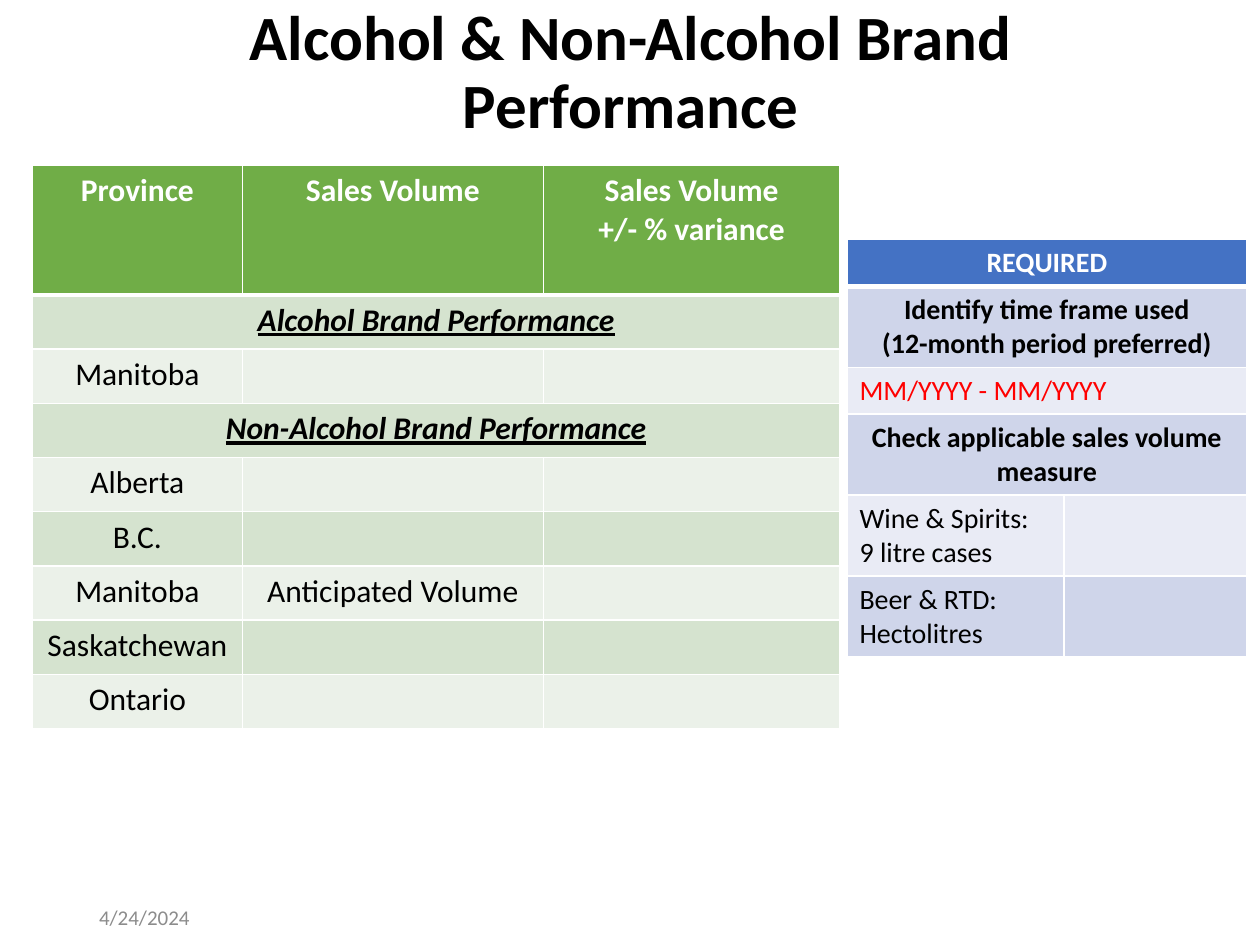
from lxml import etree
from pptx import Presentation
from pptx.dml.color import RGBColor
from pptx.enum.text import MSO_ANCHOR, MSO_AUTO_SIZE, PP_ALIGN
from pptx.oxml.ns import qn
from pptx.util import Pt

LEFT, CENTER = PP_ALIGN.LEFT, PP_ALIGN.CENTER
MIDDLE = MSO_ANCHOR.MIDDLE
NO_AUTOFIT = MSO_AUTO_SIZE.NONE
TITLE_ONLY = 5
FONT = "Calibri"

COLORS = {
    "black": "000000", "white": "FFFFFF", "gray": "8C8C8C", "red": "FF0000",
    "green": "70AD47", "green_dark": "D5E3CF", "green_light": "EBF1E9",
    "blue": "4472C4", "blue_dark": "CFD5EA", "blue_light": "E9EBF5",
}
SECTION = {"bold": True, "italic": True, "underline": True}


def rgb(name):
    return RGBColor.from_string(COLORS[name])


def write_text(frame, text, size=18, color="black", align=LEFT, bold=False,
               italic=False, underline=False, spacing=None):
    """Fill a text frame, one paragraph for each line of text."""
    frame.word_wrap = True
    for index, line in enumerate(text.split("\n")):
        paragraph = frame.add_paragraph() if index else frame.paragraphs[0]
        paragraph.alignment = align
        paragraph.line_spacing = spacing
        run = paragraph.add_run()
        run.text = line
        font = run.font
        font.name, font.size, font.color.rgb = FONT, Pt(size), rgb(color)
        font.bold, font.italic, font.underline = bold, italic, underline


def set_borders(cell, top, bottom):
    """Draw white cell borders; the schema wants them before the fill."""
    properties = cell._tc.get_or_add_tcPr()
    widths = {"a:lnL": 1, "a:lnR": 1, "a:lnT": top, "a:lnB": bottom}
    for index, (tag, width) in enumerate(widths.items()):
        line = etree.Element(qn(tag), w=str(Pt(width)))
        fill = etree.SubElement(line, qn("a:solidFill"))
        etree.SubElement(fill, qn("a:srgbClr"), val=COLORS["white"])
        properties.insert(index, line)


def add_banded_table(slide, box, columns, heights, hue):
    """Add an empty table with a header row and two alternating shades."""
    frame = slide.shapes.add_table(len(heights), len(columns), *map(Pt, box))
    table = frame.table
    for column, width in zip(table.columns, columns):
        column.width = Pt(width)
    for index, (row, height) in enumerate(zip(table.rows, heights)):
        row.height = Pt(height)
        shade = hue if index == 0 else hue + ("_dark" if index % 2 else "_light")
        for cell in row.cells:
            cell.fill.solid()
            cell.fill.fore_color.rgb = rgb(shade)
            set_borders(cell, top=3 if index == 1 else 1, bottom=1 if index else 3)
    return table


def merge_row(table, row):
    table.cell(row, 0).merge(table.cell(row, len(table.columns) - 1))


def add_title(slide, box, text):
    title = slide.shapes.title
    title.left, title.top, title.width, title.height = map(Pt, box)
    frame = title.text_frame
    frame.auto_size = NO_AUTOFIT
    frame.vertical_anchor = MIDDLE
    write_text(frame, text, size=36, align=CENTER, bold=True, spacing=0.9)


def add_performance_table(slide, box):
    header = ["Province", "Sales Volume", "Sales Volume\n+/- % variance"]
    rows = [
        ["Alcohol Brand Performance"],
        ["Manitoba", "", ""],
        ["Non-Alcohol Brand Performance"],
        ["Alberta", "", ""],
        ["B.C.", "", ""],
        ["Manitoba", "Anticipated Volume", ""],
        ["Saskatchewan", "", ""],
        ["Ontario", "", ""],
    ]
    table = add_banded_table(slide, box, [120, 172, 169.5],
                             [74] + [31] * len(rows), "green")
    for column, text in enumerate(header):
        write_text(table.cell(0, column).text_frame, text, color="white",
                   align=CENTER, bold=True)
    for index, texts in enumerate(rows, start=1):
        is_section = len(texts) == 1
        if is_section:
            merge_row(table, index)
        for column, text in enumerate(texts):
            if text:
                write_text(table.cell(index, column).text_frame, text,
                           align=CENTER, **(SECTION if is_section else {}))


def add_required_table(slide, box):
    heading = {"align": CENTER, "bold": True}
    rows = [
        ("REQUIRED", {**heading, "color": "white"}),
        ("Identify time frame used\n(12-month period preferred)", heading),
        ("MM/YYYY - MM/YYYY", {"color": "red"}),
        ("Check applicable sales volume measure", heading),
        ("Wine & Spirits:\n9 litre cases", {}),
        ("Beer & RTD: Hectolitres", {}),
    ]
    single, double, merged_rows = 26.7, 46.3, 4
    table = add_banded_table(slide, box, [124, 104.5],
                             [single, double] * 2 + [double] * 2, "blue")
    for index, (text, style) in enumerate(rows):
        if index < merged_rows:
            merge_row(table, index)
        write_text(table.cell(index, 0).text_frame, text, size=16, **style)


def add_date(slide, box, text):
    frame = slide.shapes.add_textbox(*map(Pt, box)).text_frame
    frame.margin_top = frame.margin_bottom = 0
    frame.vertical_anchor = MIDDLE
    write_text(frame, text, size=12, color="gray")


def main():
    presentation = Presentation()
    presentation.slide_width, presentation.slide_height = Pt(720), Pt(540)
    slide = presentation.slides.add_slide(presentation.slide_layouts[TITLE_ONLY])
    add_title(slide, (36.5, 9.5, 648, 66), "Alcohol & Non-Alcohol Brand Performance")
    add_date(slide, (49.5, 518.5, 162, 11), "4/24/2024")
    add_performance_table(slide, (18.5, 94.5, 461.5, 322))
    add_required_table(slide, (484, 137, 228.5, 238.6))
    presentation.save("out.pptx")


if __name__ == "__main__":
    main()
